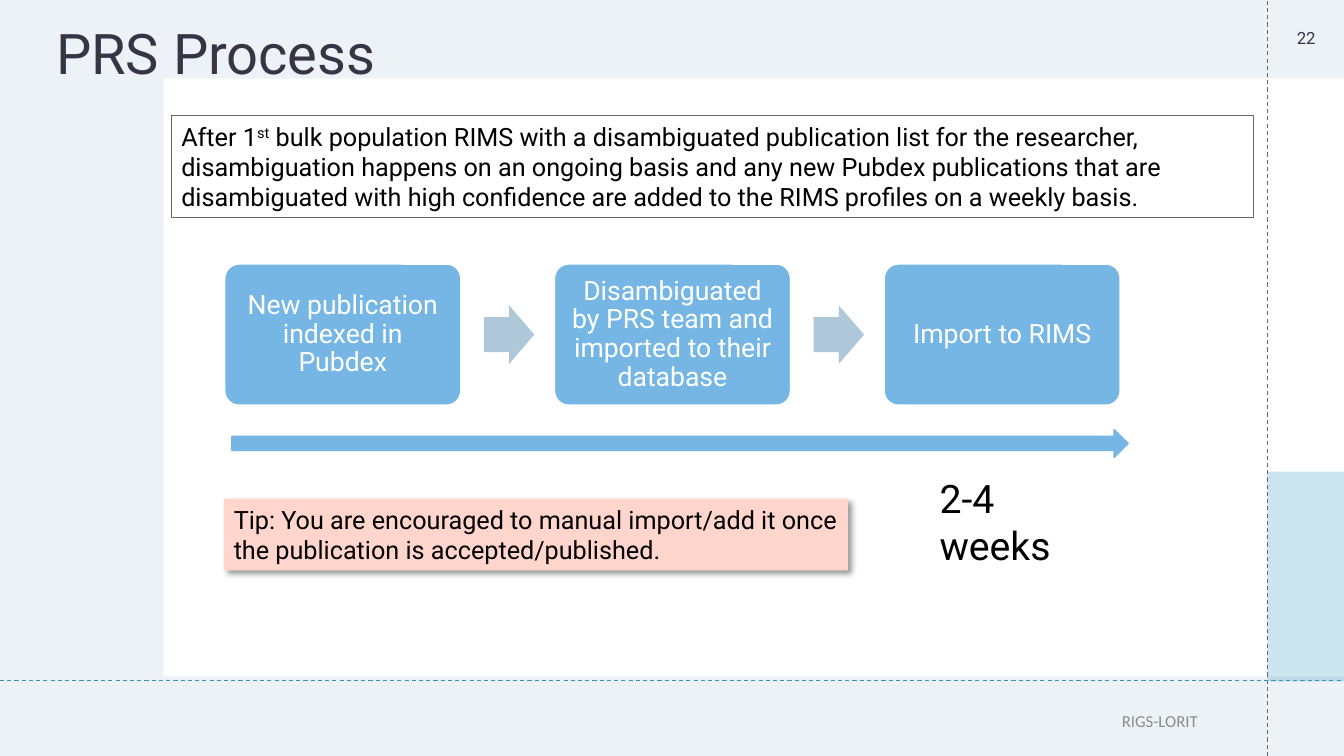
from lxml import etree
from pptx import Presentation
from pptx.dml.color import RGBColor
from pptx.enum.dml import MSO_LINE
from pptx.enum.shapes import MSO_CONNECTOR, MSO_SHAPE
from pptx.enum.text import MSO_ANCHOR, PP_ALIGN
from pptx.oxml import parse_xml
from pptx.oxml.ns import nsdecls, qn
from pptx.util import Inches, Pt

TITLE = "PRS Process"
PAGE = "22"
FOOTER = "RIGS-LORIT"
INTRO = [
    ("After 1", False),
    ("st", True),
    (" bulk population RIMS with a disambiguated publication list for the "
     "researcher, disambiguation happens on an ongoing basis and any new Pubdex "
     "publications that are disambiguated with high confidence are added to the "
     "RIMS profiles on a weekly basis.", False),
]
STEPS = [
    "New publication indexed in Pubdex",
    "Disambiguated by PRS team and imported to their database",
    "Import to RIMS",
]
DURATION = "2-4 weeks"
TIP = ("Tip: You are encouraged to manual import/add it once "
       "the publication is accepted/published.")

BLACK = RGBColor(0x00, 0x00, 0x00)
WHITE = RGBColor(0xFF, 0xFF, 0xFF)
INK = RGBColor(0x37, 0x35, 0x45)
GREY = RGBColor(0x8C, 0x8C, 0x8C)
RULE_GREY = RGBColor(0x66, 0x66, 0x66)
MIST = RGBColor(0xCE, 0xDB, 0xE6)
TEAL = RGBColor(0x34, 0x94, 0xBA)
SKY = RGBColor(0x75, 0xB6, 0xE5)
STEEL = RGBColor(0xAE, 0xC8, 0xD9)
PINK = RGBColor(0xFF, 0xD5, 0xCC)

STEP_LEFT, STEP_TOP, STEP_PITCH = 2.23, 2.62, 3.27
STEP_W, STEP_H = 2.34, 1.4
ARROW_OFFSET, ARROW_W, ARROW_H = 2.57, 0.5, 0.58

prs = Presentation()
prs.slide_width, prs.slide_height = Inches(13.33), Inches(7.5)
s = prs.slides.add_slide(prs.slide_layouts[6])


def add_shape(kind, box, fill=None, line=None, width=1, alpha=None, adj=()):
    sp = s.shapes.add_shape(kind, *map(Inches, box))
    sp.shadow.inherit = False
    if fill is None:
        sp.fill.background()
    else:
        sp.fill.solid()
        sp.fill.fore_color.rgb = fill
    if alpha is not None:
        color = sp.fill._xPr.find(qn("a:solidFill"))[0]
        etree.SubElement(color, qn("a:alpha")).set("val", str(alpha * 1000))
    if line is None:
        sp.line.fill.background()
    else:
        sp.line.color.rgb = line
        sp.line.width = Pt(width)
    for i, value in enumerate(adj):
        sp.adjustments[i] = value
    return sp


def write(sp, runs, size, color, font="Roboto", align=PP_ALIGN.LEFT,
          anchor=MSO_ANCHOR.TOP, spacing=None):
    """Fill a shape with one paragraph; runs is a string or (text, superscript) pairs."""
    tf = sp.text_frame
    tf.word_wrap = True
    tf.vertical_anchor = anchor
    p = tf.paragraphs[0]
    p.alignment = align
    p.line_spacing = spacing
    p.font.size, p.font.name = Pt(size), font
    p.font.color.rgb = color
    for text, raised in [(runs, False)] if isinstance(runs, str) else runs:
        r = p.add_run()
        r.text = text
        if raised:
            r.font._element.set("baseline", "30000")
    return tf


def add_text(box, runs, size, color, **style):
    return write(s.shapes.add_textbox(*map(Inches, box)), runs, size, color, **style)


def add_dashed_line(ends, color):
    line = s.shapes.add_connector(MSO_CONNECTOR.STRAIGHT, *map(Inches, ends))
    line.line.color.rgb = color
    line.line.width = Pt(0.75)
    line.line.dash_style = MSO_LINE.DASH
    etree.SubElement(line._element.spPr, qn("a:effectLst"))


# Backdrop
add_shape(MSO_SHAPE.RECTANGLE, (0, 0, 13.33, 7.5), MIST, alpha=35)
add_shape(MSO_SHAPE.RECTANGLE, (1.62, 0.78, 11.72, 5.93), WHITE)
add_shape(MSO_SHAPE.RECTANGLE, (12.57, 4.68, 0.76, 2.08), TEAL, alpha=25)
add_dashed_line((12.57, 7.5, 12.57, 0), RULE_GREY)
add_dashed_line((0, 6.75, 13.33, 6.75), TEAL)

# Heading and introduction
add_text((0.46, 0.15, 11.53, 0.82), TITLE, 40, INK,
         anchor=MSO_ANCHOR.MIDDLE, spacing=0.9)
add_text((12.58, 0, 0.75, 0.75), PAGE, 12, INK,
         align=PP_ALIGN.CENTER, anchor=MSO_ANCHOR.MIDDLE)
intro = add_shape(MSO_SHAPE.RECTANGLE, (1.7, 1.15, 10.73, 1.01),
                  line=RULE_GREY, width=0.75)
write(intro, INTRO, 18, BLACK)

# Process steps
for i, step in enumerate(STEPS):
    left = STEP_LEFT + i * STEP_PITCH
    card = add_shape(MSO_SHAPE.ROUNDED_RECTANGLE, (left, STEP_TOP, STEP_W, STEP_H),
                     SKY, WHITE, adj=[0.1])
    tf = write(card, step, 19, WHITE, align=PP_ALIGN.CENTER,
               anchor=MSO_ANCHOR.MIDDLE, spacing=0.9)
    tf.margin_left = tf.margin_right = Inches(0.08)
    tf.margin_top = tf.margin_bottom = Inches(0.08)
    if i < len(STEPS) - 1:
        arrow_top = STEP_TOP + (STEP_H - ARROW_H) / 2
        add_shape(MSO_SHAPE.RIGHT_ARROW,
                  (left + ARROW_OFFSET, arrow_top, ARROW_W, ARROW_H),
                  STEEL, adj=[0.6, 0.5])

# Timeline, duration and tip
add_text((9.22, 4.66, 1.93, 0.57), DURATION, 28, BLACK)
add_shape(MSO_SHAPE.RIGHT_ARROW, (2.3, 4.26, 8.89, 0.28), SKY, SKY)
tip = add_shape(MSO_SHAPE.RECTANGLE, (2.22, 4.95, 6.19, 0.71), PINK)
tip._element.spPr.find(qn("a:effectLst")).append(parse_xml(
    f'<a:outerShdw {nsdecls("a")} blurRad="{Pt(4)}" dist="{Pt(3)}" dir="2700000" '
    'algn="tl" rotWithShape="0"><a:srgbClr val="000000"><a:alpha val="40000"/>'
    '</a:srgbClr></a:outerShdw>'))
write(tip, TIP, 18, BLACK)

add_text((4.11, 6.8, 7.87, 0.7), FOOTER, 12, GREY, font="Calibri",
         align=PP_ALIGN.RIGHT, anchor=MSO_ANCHOR.MIDDLE).paragraphs[0].space_after = Pt(6)

prs.save("out.pptx")
